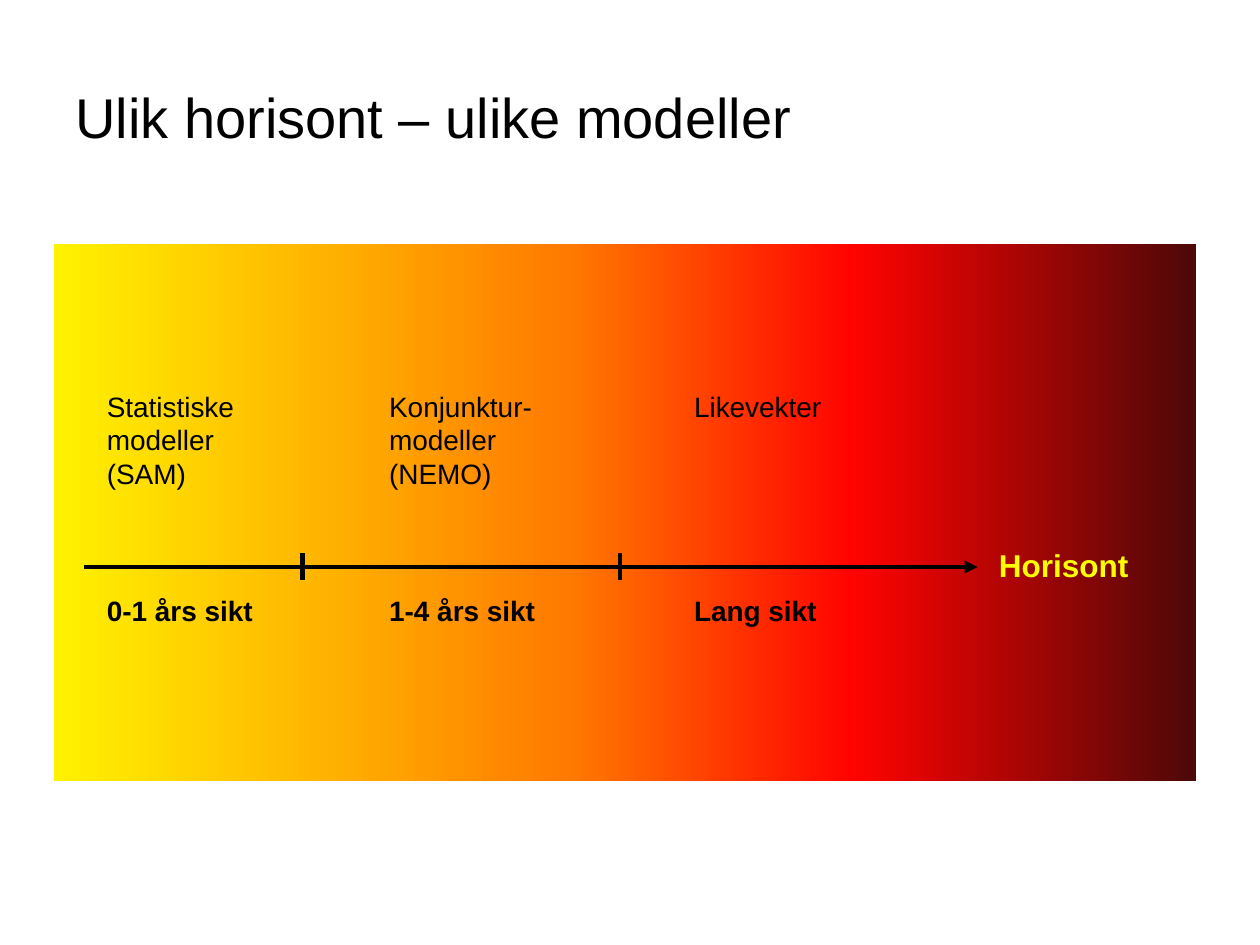
from lxml import etree
from pptx import Presentation
from pptx.dml.color import RGBColor
from pptx.enum.shapes import MSO_CONNECTOR, MSO_SHAPE
from pptx.enum.text import MSO_ANCHOR
from pptx.oxml.ns import qn
from pptx.util import Inches, Pt

RECTANGLE = MSO_SHAPE.RECTANGLE
STRAIGHT = MSO_CONNECTOR.STRAIGHT
TOP, MIDDLE = MSO_ANCHOR.TOP, MSO_ANCHOR.MIDDLE

BLACK, YELLOW = "000000", "FFFF00"
HEAT_STOPS = [(0, "FFF200"), (45, "FF7A00"), (70, "FF0300"), (100, "4D0808")]
AXIS_Y = 4.5
MODEL_TOP, TERM_TOP = 3.04, 4.66
HORIZONS = [
    (0.75, 1.34, ["Statistiske modeller (SAM)"], "0-1 års sikt"),
    (2.99, 1.65, ["Konjunktur-", "modeller", "(NEMO)"], "1-4 års sikt"),
    (5.41, 1.88, ["Likevekter"], "Lang sikt"),
]
TICKS = [2.4, 4.92]


def rgb(value):
    """Turn a hex string into a colour."""
    return RGBColor.from_string(value)


def add_text(slide, box, lines, anchor=TOP, color=BLACK, **font):
    """Add a wrapped text box with one paragraph per line."""
    tf = slide.shapes.add_textbox(*map(Inches, box)).text_frame
    tf.word_wrap = True
    tf.vertical_anchor = anchor
    for i, line in enumerate(lines):
        p = tf.paragraphs[0] if i == 0 else tf.add_paragraph()
        r = p.add_run()
        r.text = line
        r.font.color.rgb = rgb(color)
        for name, value in {"name": "Arial", "size": Pt(16), **font}.items():
            setattr(r.font, name, value)


def add_gradient_panel(slide, box, stops):
    """Add a borderless rectangle filled with a left-to-right gradient."""
    sp = slide.shapes.add_shape(RECTANGLE, *map(Inches, box))
    sp.shadow.inherit = False
    sp.line.fill.background()
    sp.fill.gradient()
    sp.fill.gradient_angle = 0
    stop_list = sp._element.spPr.find(qn("a:gradFill")).find(qn("a:gsLst"))
    for old in list(stop_list):
        stop_list.remove(old)
    for percent, color in stops:
        gs = etree.SubElement(stop_list, qn("a:gs"), pos=str(percent * 1000))
        etree.SubElement(gs, qn("a:srgbClr"), val=color)


def add_line(slide, start, end, arrow=False):
    """Add a straight black line, with an arrowhead at its end if asked."""
    points = map(Inches, (*start, *end))
    line = slide.shapes.add_connector(STRAIGHT, *points)
    line.line.color.rgb = rgb(BLACK)
    line.line.width = Pt(2.5)
    if arrow:
        ln = line.line._get_or_add_ln()
        etree.SubElement(ln, qn("a:tailEnd"), type="triangle")
    etree.SubElement(line._element.spPr, qn("a:effectLst"))


def main():
    """Build the slide on model horizons."""
    prs = Presentation()
    prs.slide_width, prs.slide_height = Inches(10), Inches(7.5)
    s = prs.slides.add_slide(prs.slide_layouts[6])

    add_text(s, (0.5, 0.3, 9, 1.25), ["Ulik horisont – ulike modeller"], MIDDLE, size=Pt(32))
    add_gradient_panel(s, (0.43, 1.94, 9.06, 4.26), HEAT_STOPS)
    for left, width, model, term in HORIZONS:
        height = 0.91 if left < TICKS[-1] else 0.37
        add_text(s, (left, MODEL_TOP, width, height), model)
        add_text(s, (left, TERM_TOP, 1.89, 0.37), [term], MIDDLE, bold=True)

    add_line(s, (0.67, AXIS_Y), (7.76, AXIS_Y), arrow=True)
    for x in TICKS:
        add_line(s, (x, AXIS_Y - 0.11), (x, AXIS_Y + 0.1))
    add_text(s, (7.83, 4.28, 1.42, 0.4), ["Horisont"], MIDDLE, YELLOW, size=Pt(18), bold=True)

    prs.save("out.pptx")


if __name__ == "__main__":
    main()
